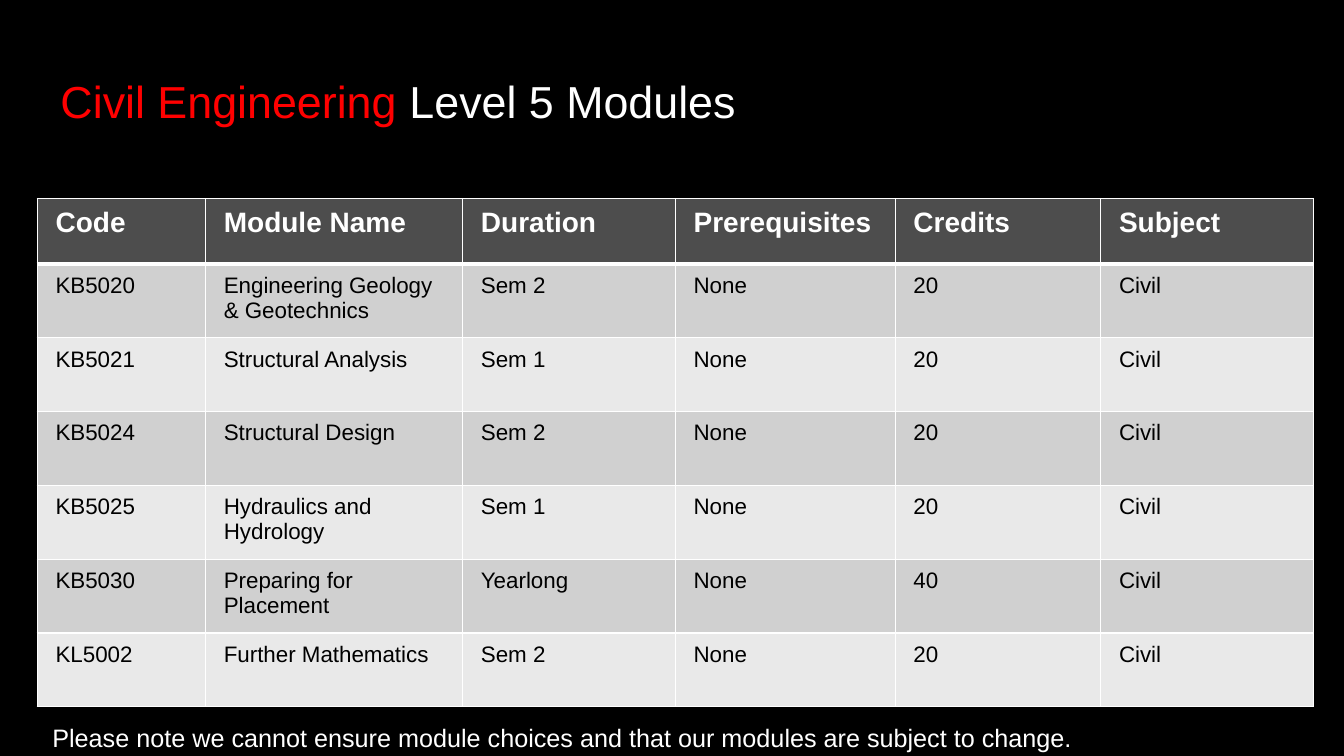
from lxml import etree
from pptx import Presentation
from pptx.dml.color import RGBColor
from pptx.enum.text import MSO_ANCHOR, MSO_AUTO_SIZE, PP_ALIGN
from pptx.oxml.ns import qn
from pptx.util import Cm, Pt

LEFT = PP_ALIGN.LEFT
MIDDLE = MSO_ANCHOR.MIDDLE
TOP = MSO_ANCHOR.TOP
NO_FIT = MSO_AUTO_SIZE.NONE
GROW = MSO_AUTO_SIZE.SHAPE_TO_FIT_TEXT

WHITE, BLACK, RED = "FFFFFF", "000000", "FF0000"
DARK, GREY, PALE = "4D4D4D", "D0D0D0", "E9E9E9"

BIG = {"name": "Arial", "size": Pt(32), "bold": False}
HEAD = {"name": "Arial", "size": Pt(20), "bold": True}
BODY = {"name": "Arial", "size": Pt(16), "bold": False}
NOTE = {"name": "Arial", "size": Pt(18), "bold": False}
INSET = {"margin_left": Cm(0.46), "margin_right": Cm(0.46),
         "margin_top": Cm(0.23), "margin_bottom": Cm(0.23),
         "vertical_anchor": TOP}

COLS = [4.24, 6.48, 5.36, 5.54, 5.18, 5.36]
HEAD_H, ROW_H = 1.65, 1.86
ROWS = [
    ("Code", "Module Name", "Duration", "Prerequisites", "Credits", "Subject"),
    ("KB5020", "Engineering Geology & Geotechnics", "Sem 2", "None", "20", "Civil"),
    ("KB5021", "Structural Analysis", "Sem 1", "None", "20", "Civil"),
    ("KB5024", "Structural Design", "Sem 2", "None", "20", "Civil"),
    ("KB5025", "Hydraulics and Hydrology", "Sem 1", "None", "20", "Civil"),
    ("KB5030", "Preparing for Placement", "Yearlong", "None", "40", "Civil"),
    ("KL5002", "Further Mathematics", "Sem 2", "None", "20", "Civil"),
]


def paint(fmt, tint):
    """Give a fill a solid colour."""
    fmt.solid()
    fmt.fore_color.rgb = RGBColor.from_string(tint)


def apply(item, style):
    for key, value in style.items():
        setattr(item, key, value)


def write(para, text, style, tint):
    run = para.add_run()
    run.text = text
    apply(run.font, style)
    paint(run.font.fill, tint)


def edge(cell, side, width):
    """Draw one white cell border."""
    line = etree.SubElement(cell._tc.get_or_add_tcPr(), qn("a:ln" + side),
                            w=str(Pt(width)))
    fill = etree.SubElement(line, qn("a:solidFill"))
    etree.SubElement(fill, qn("a:srgbClr"), val=WHITE)


def place(shape, box):
    names = ("left", "top", "width", "height")
    apply(shape, {name: Cm(size) for name, size in zip(names, box)})


def add_title(slide, box):
    title = slide.shapes.title
    place(title, box)
    frame = title.text_frame
    apply(frame, {"word_wrap": True, "auto_size": NO_FIT, "vertical_anchor": MIDDLE})
    para = frame.paragraphs[0]
    apply(para, {"alignment": LEFT, "line_spacing": 0.9})
    write(para, "Civil Engineering", BIG, RED)
    write(para, " Level 5 Modules", BIG, WHITE)


def add_grid(slide, left, top):
    high = HEAD_H + ROW_H * (len(ROWS) - 1)
    box = [Cm(n) for n in (left, top, sum(COLS), high)]
    table = slide.shapes.add_table(len(ROWS), len(COLS), *box).table
    for col, width in zip(table.columns, COLS):
        col.width = Cm(width)
    for r, row in enumerate(ROWS):
        table.rows[r].height = Cm(ROW_H if r else HEAD_H)
        shade = (PALE, GREY)[r % 2] if r else DARK
        style, tint = (BODY, BLACK) if r else (HEAD, WHITE)
        # The rule below the header is thicker
        sides = {"L": 1, "R": 1, "T": 3 if r == 1 else 1, "B": 1 if r else 3}
        for c, text in enumerate(row):
            cell = table.cell(r, c)
            apply(cell, INSET)
            for side, width in sides.items():
                edge(cell, side, width)
            paint(cell.fill, shade)
            write(cell.text_frame.paragraphs[0], text, style, tint)


def add_note(slide, box):
    note = slide.shapes.add_textbox(*[Cm(n) for n in box])
    apply(note.text_frame, {"word_wrap": True, "auto_size": GROW})
    write(note.text_frame.paragraphs[0],
          "Please note we cannot ensure module choices and that our modules "
          "are subject to change.", NOTE, WHITE)


def main():
    deck = Presentation()
    apply(deck, {"slide_width": Cm(33.87), "slide_height": Cm(19.05)})
    slide = deck.slides.add_slide(deck.slide_layouts[5])
    paint(slide.background.fill, BLACK)

    # Heading, module table and footnote
    add_title(slide, (1.27, 1.02, 25.78, 3.18))
    add_grid(slide, 0.94, 5)
    add_note(slide, (1.07, 18.08, 31.06, 1.02))
    deck.save("out.pptx")


if __name__ == "__main__":
    main()
